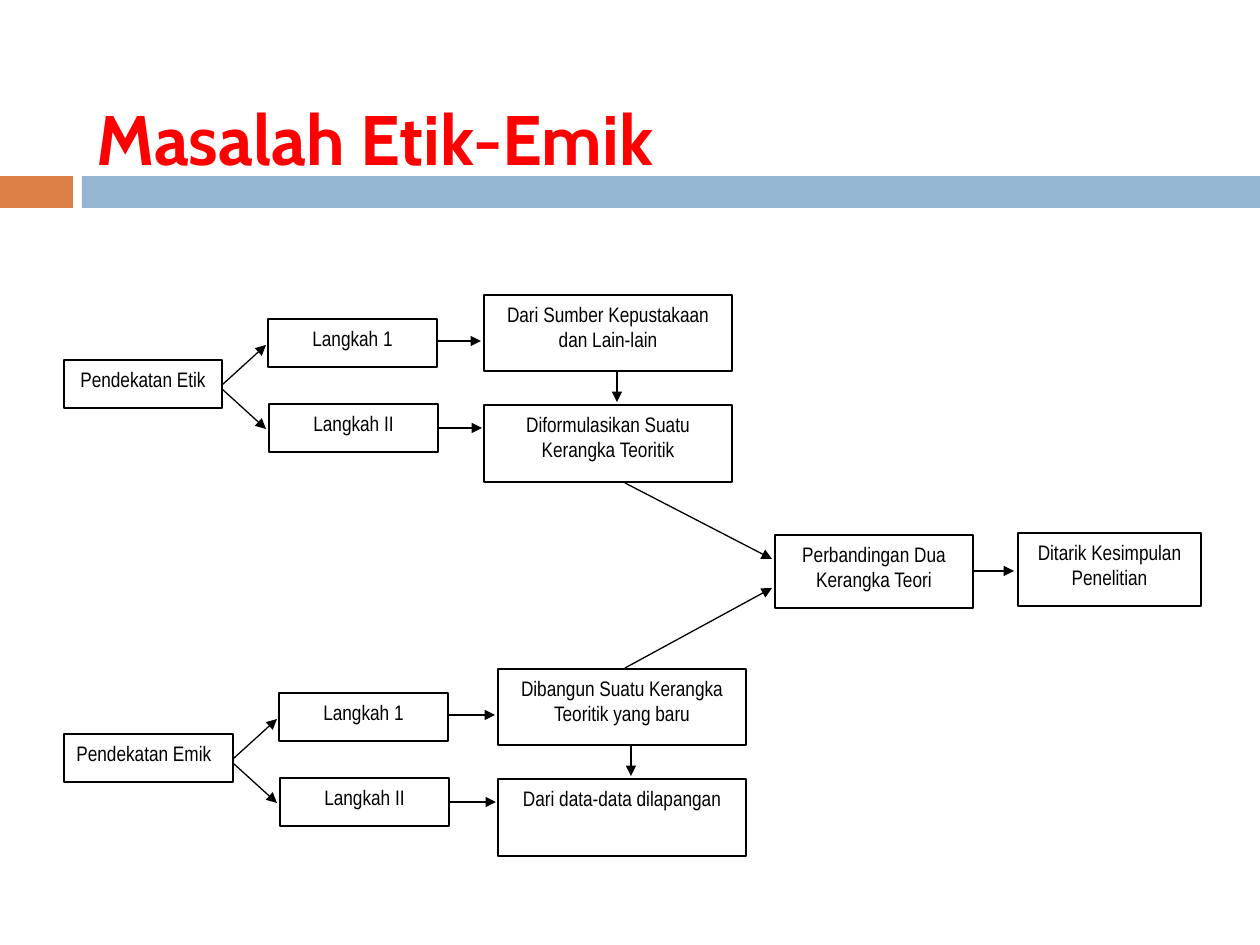
from dataclasses import dataclass

import pptx
import pptx.dml.color
import pptx.enum.shapes
import pptx.enum.text
import pptx.oxml.ns
import pptx.util
from lxml import etree

EMU_PER_PX = 914400 / 126
ALIGN = pptx.enum.text.PP_ALIGN
RGB = pptx.dml.color.RGBColor


@dataclass(frozen=True)
class Theme:
    ink: RGB = RGB(0, 0, 0)
    paper: RGB = RGB(255, 255, 255)
    heading: RGB = RGB(255, 0, 0)
    accent: RGB = RGB(0xDD, 0x80, 0x47)
    band: RGB = RGB(0x94, 0xB6, 0xD2)
    heading_font: str = "Cabin"
    body_font: str = "Arial Narrow"
    heading_size: int = 40
    body_size: int = 12
    space_after: int = 10
    stroke: float = 0.75


@dataclass(frozen=True)
class Step:
    text: str
    left: int
    top: int
    width: int
    height: int
    align: ALIGN = ALIGN.CENTER


@dataclass(frozen=True)
class Arrow:
    x1: int
    y1: int
    x2: int
    y2: int


@dataclass(frozen=True)
class Branch:
    approach: str
    align: ALIGN
    top: int
    fork: int
    theory_left: int
    upper: str
    lower: str


THEME = Theme()

BRANCHES = [
    Branch("Pendekatan Etik", ALIGN.CENTER, 295, 222, 484,
           "Dari Sumber Kepustakaan dan Lain-lain",
           "Diformulasikan Suatu Kerangka Teoritik"),
    Branch("Pendekatan Emik", ALIGN.LEFT, 669, 233, 498,
           "Dibangun Suatu Kerangka Teoritik yang baru",
           "Dari data-data dilapangan"),
]

CONCLUSION = [
    Step("Perbandingan Dua Kerangka Teori", 775, 535, 198, 73),
    Step("Ditarik Kesimpulan Penelitian", 1018, 533, 183, 73),
]

MERGE = [
    Arrow(625, 483, 772, 559),
    Arrow(625, 668, 772, 588),
    Arrow(973, 571, 1014, 571),
]


def px(length: int) -> pptx.util.Emu:
    return pptx.util.Emu(round(length * EMU_PER_PX))


def draw_rect(slide, left: int, top: int, width: int, height: int, fill: RGB):
    rect = slide.shapes.add_shape(
        pptx.enum.shapes.MSO_SHAPE.RECTANGLE, px(left), px(top), px(width), px(height))
    rect.shadow.inherit = False
    rect.fill.solid()
    rect.fill.fore_color.rgb = fill
    rect.line.fill.background()
    return rect


def draw_step(slide, step: Step) -> None:
    box = draw_rect(slide, step.left, step.top, step.width, step.height, THEME.paper)
    box.line.color.rgb = THEME.ink
    box.line.width = pptx.util.Pt(THEME.stroke)
    box.text_frame.word_wrap = True
    box.text_frame.vertical_anchor = pptx.enum.text.MSO_ANCHOR.TOP
    label = box.text_frame.paragraphs[0]
    label.text = step.text
    label.alignment = step.align
    label.space_after = pptx.util.Pt(THEME.space_after)
    label.font.name = THEME.body_font
    label.font.size = pptx.util.Pt(THEME.body_size)
    label.font.color.rgb = THEME.ink


def draw_arrow(slide, arrow: Arrow) -> None:
    link = slide.shapes.add_connector(
        pptx.enum.shapes.MSO_CONNECTOR.STRAIGHT,
        px(arrow.x1), px(arrow.y1), px(arrow.x2), px(arrow.y2))
    link.line.color.rgb = THEME.ink
    link.line.width = pptx.util.Pt(THEME.stroke)
    qn = pptx.oxml.ns.qn
    etree.SubElement(link.line._get_or_add_ln(), qn("a:tailEnd"), type="triangle")
    etree.SubElement(link._element.spPr, qn("a:effectLst"))


def draw_branch(slide, branch: Branch) -> None:
    top, fork, theory = branch.top, branch.fork, branch.theory_left
    steps_left = fork + 46
    steps_right = steps_left + 169
    draw_step(slide, Step(branch.approach, 64, top + 65, fork - 64, 48, branch.align))
    draw_step(slide, Step("Langkah 1", steps_left, top + 24, 169, 48))
    draw_step(slide, Step("Langkah II", steps_left + 1, top + 109, 169, 48))
    draw_step(slide, Step(branch.upper, theory, top, 248, 76))
    draw_step(slide, Step(branch.lower, theory, top + 110, 248, 77))
    for arrow in (
        Arrow(fork, top + 90, fork + 44, top + 50),
        Arrow(fork, top + 94, fork + 44, top + 134),
        Arrow(steps_right, top + 46, theory - 3, top + 46),
        Arrow(steps_right + 1, top + 133, theory - 2, top + 133),
        Arrow(theory + 133, top + 76, theory + 133, top + 107),
    ):
        draw_arrow(slide, arrow)


def draw_heading(slide, text: str) -> None:
    frame = slide.shapes.add_textbox(px(84), px(88), px(1124), px(100)).text_frame
    frame.word_wrap = True
    frame.vertical_anchor = pptx.enum.text.MSO_ANCHOR.MIDDLE
    heading = frame.paragraphs[0]
    heading.text = text
    heading.font.name = THEME.heading_font
    heading.font.size = pptx.util.Pt(THEME.heading_size)
    heading.font.bold = True
    heading.font.color.rgb = THEME.heading


def main() -> None:
    deck = pptx.Presentation()
    deck.slide_width, deck.slide_height = px(1260), px(945)
    slide = deck.slides.add_slide(deck.slide_layouts[6])
    draw_rect(slide, 0, 176, 73, 32, THEME.accent)
    draw_rect(slide, 82, 176, 1178, 32, THEME.band)
    draw_heading(slide, "Masalah Etik-Emik")
    for branch in BRANCHES:
        draw_branch(slide, branch)
    for step in CONCLUSION:
        draw_step(slide, step)
    for arrow in MERGE:
        draw_arrow(slide, arrow)
    deck.save("out.pptx")


if __name__ == "__main__":
    main()
